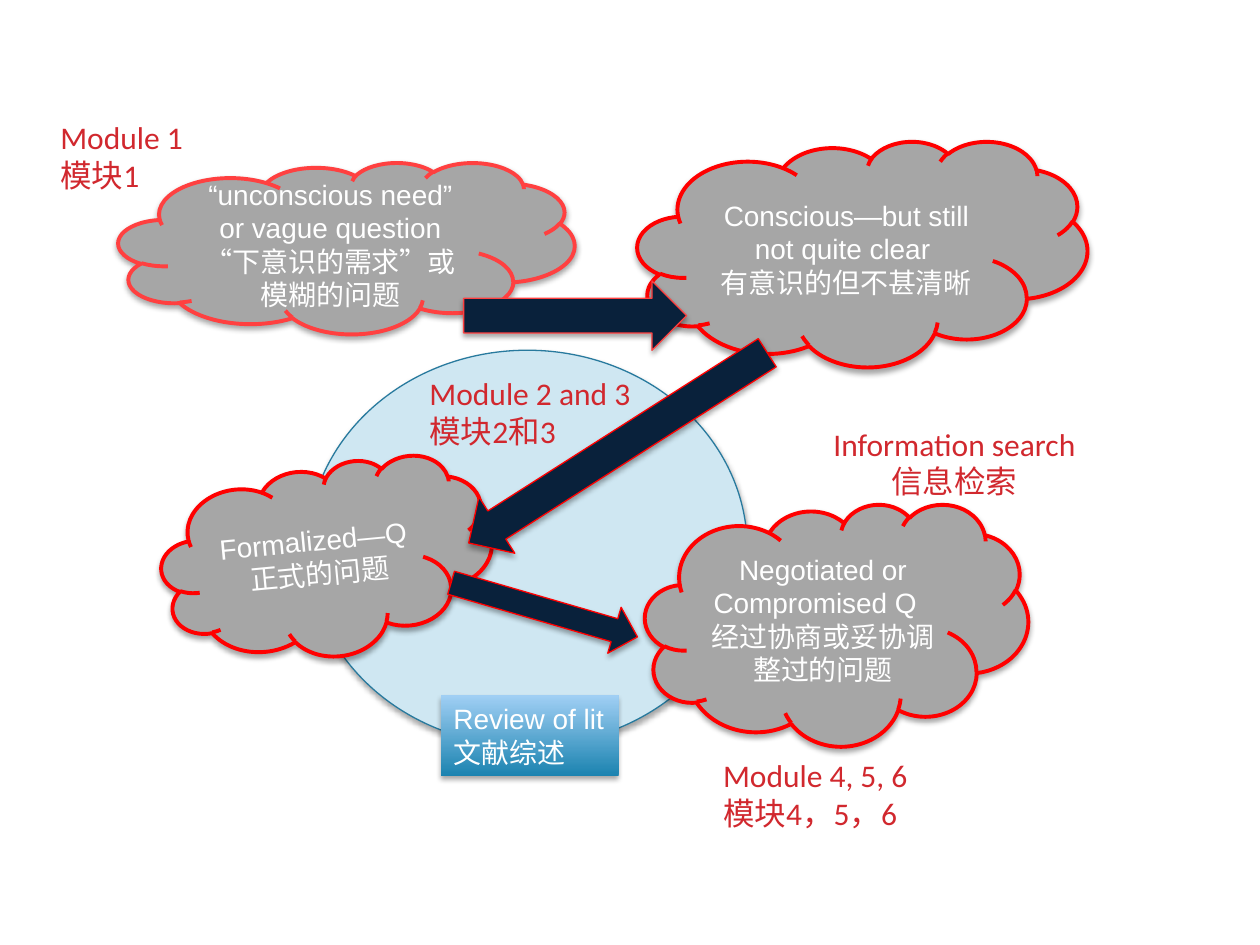
from lxml.etree import SubElement
from pptx import Presentation
from pptx.dml.color import RGBColor
from pptx.enum.shapes import MSO_SHAPE
from pptx.enum.text import MSO_ANCHOR, MSO_AUTO_SIZE, PP_ALIGN
from pptx.oxml.ns import qn
from pptx.util import Inches, Pt

WHITE = RGBColor(0xFF, 0xFF, 0xFF)
GRAY = RGBColor(0xA6, 0xA6, 0xA6)
RED = RGBColor(0xFF, 0x00, 0x00)
LIGHT_RED = RGBColor(0xFF, 0x40, 0x40)
LABEL_RED = RGBColor(0xD1, 0x28, 0x2E)
NAVY = RGBColor(0x09, 0x21, 0x3B)
PALE_BLUE = RGBColor(0xCF, 0xE7, 0xF2)
BLUE_EDGE = RGBColor(0x28, 0x7A, 0x9E)
BLUE_DARK = RGBColor(0x1B, 0x83, 0xB0)
BLUE_LIGHT = RGBColor(0xA0, 0xCF, 0xF4)

# Left, top, width, height in inches; line colour; rotation; paragraphs
CLOUDS = [
    ((0.94, 1.29, 3.62, 1.36), LIGHT_RED, 0,
     ["“unconscious need” or vague question", "“下意识的需求”或模糊的问题"]),
    ((5.06, 1.12, 3.57, 1.79), RED, 0,
     ["Conscious—but still not quite clear ", "有意识的但不甚清晰"]),
    ((1.28, 3.68, 2.63, 1.53), RED, 354.5,
     ["Formalized—Q", " 正式的问题"]),
    ((5.12, 4, 3.04, 1.92), RED, 0,
     ["Negotiated or", "Compromised Q  ", "经过协商或妥协调整过的问题"]),
]

# Box, text lines, wrapping, alignment
LABELS = [
    ((0.38, 0.89, 1.19, 0.71), ["Module 1", "模块1"], False, PP_ALIGN.LEFT),
    ((3.31, 2.92, 1.82, 0.71), ["Module 2 and 3", "模块2和3"], False, PP_ALIGN.LEFT),
    ((5.64, 5.95, 1.69, 0.71), ["Module 4, 5, 6", "模块4，5，6"], False, PP_ALIGN.LEFT),
    ((5.93, 3.32, 3.29, 0.71), ["Information search", "信息检索"], True, PP_ALIGN.CENTER),
]


def add_shadow(shape):
    """Give the shape a soft shadow that falls straight down."""
    shape.shadow.inherit = False
    effects = shape.element.spPr.find(qn("a:effectLst"))
    shadow = SubElement(effects, qn("a:outerShdw"), blurRad=str(Pt(3.1)),
                        dist=str(Pt(1.8)), dir="5400000", rotWithShape="0")
    color = SubElement(shadow, qn("a:srgbClr"), val="000000")
    SubElement(color, qn("a:alpha"), val="35000")


def write_text(shape, lines, *, size=16, font="Arial", color=WHITE,
               align=PP_ALIGN.CENTER, anchor=MSO_ANCHOR.MIDDLE, wrap=True, grow=False):
    frame = shape.text_frame
    frame.word_wrap = wrap
    frame.vertical_anchor = anchor
    if grow:
        frame.auto_size = MSO_AUTO_SIZE.SHAPE_TO_FIT_TEXT
    for index, line in enumerate(lines):
        paragraph = frame.paragraphs[0] if index == 0 else frame.add_paragraph()
        paragraph.alignment = align
        run = paragraph.add_run()
        run.text = line
        run.font.size = Pt(size)
        run.font.name = font
        run.font.color.rgb = color


def add_figure(slide, kind, box, *, fill=None, line=None, width=0.75, rotation=0):
    shape = slide.shapes.add_shape(kind, *map(Inches, box))
    shape.rotation = rotation
    if fill is not None:
        shape.fill.solid()
        shape.fill.fore_color.rgb = fill
    if line is None:
        shape.line.fill.background()
    else:
        shape.line.color.rgb = line
        shape.line.width = Pt(width)
    add_shadow(shape)
    return shape


def add_cloud(slide, box, line, rotation, lines):
    cloud = add_figure(slide, MSO_SHAPE.CLOUD, box, fill=GRAY, line=line,
                       width=2.25, rotation=rotation)
    write_text(cloud, lines)


def add_review_box(slide):
    box = add_figure(slide, MSO_SHAPE.RECTANGLE, (3.5, 5.52, 1.41, 0.64))
    box.fill.gradient()
    box.fill.gradient_angle = 90
    for stop, color in zip(box.fill.gradient_stops, (BLUE_DARK, BLUE_LIGHT)):
        stop.color.rgb = color
    write_text(box, ["Review of lit", "文献综述"], align=PP_ALIGN.LEFT,
               anchor=MSO_ANCHOR.TOP, wrap=False, grow=True)


def add_label(slide, box, lines, wrap, align):
    label = slide.shapes.add_textbox(*map(Inches, box))
    write_text(label, lines, size=18, font="Calibri", color=LABEL_RED,
               align=align, anchor=MSO_ANCHOR.TOP, wrap=wrap, grow=True)


def main():
    presentation = Presentation()
    presentation.slide_width, presentation.slide_height = Inches(10), Inches(7.5)
    slide = presentation.slides.add_slide(presentation.slide_layouts[6])

    # Background circle and the four stages of a question
    add_figure(slide, MSO_SHAPE.OVAL, (2.44, 2.78, 3.49, 3.14),
               fill=PALE_BLUE, line=BLUE_EDGE)
    for cloud in CLOUDS:
        add_cloud(slide, *cloud)

    # Arrows between stages, with the literature review box
    add_figure(slide, MSO_SHAPE.RIGHT_ARROW, (3.68, 2.23, 1.77, 0.55),
               fill=NAVY, line=LIGHT_RED)
    add_figure(slide, MSO_SHAPE.RIGHT_ARROW, (3.55, 4.65, 1.54, 0.38),
               fill=NAVY, line=RED, rotation=16.2)
    add_review_box(slide)
    add_figure(slide, MSO_SHAPE.LEFT_ARROW, (3.5, 3.29, 2.81, 0.53),
               fill=NAVY, line=RED, rotation=327.5)

    # Module labels
    for label in LABELS:
        add_label(slide, *label)

    presentation.save("out.pptx")


if __name__ == "__main__":
    main()
